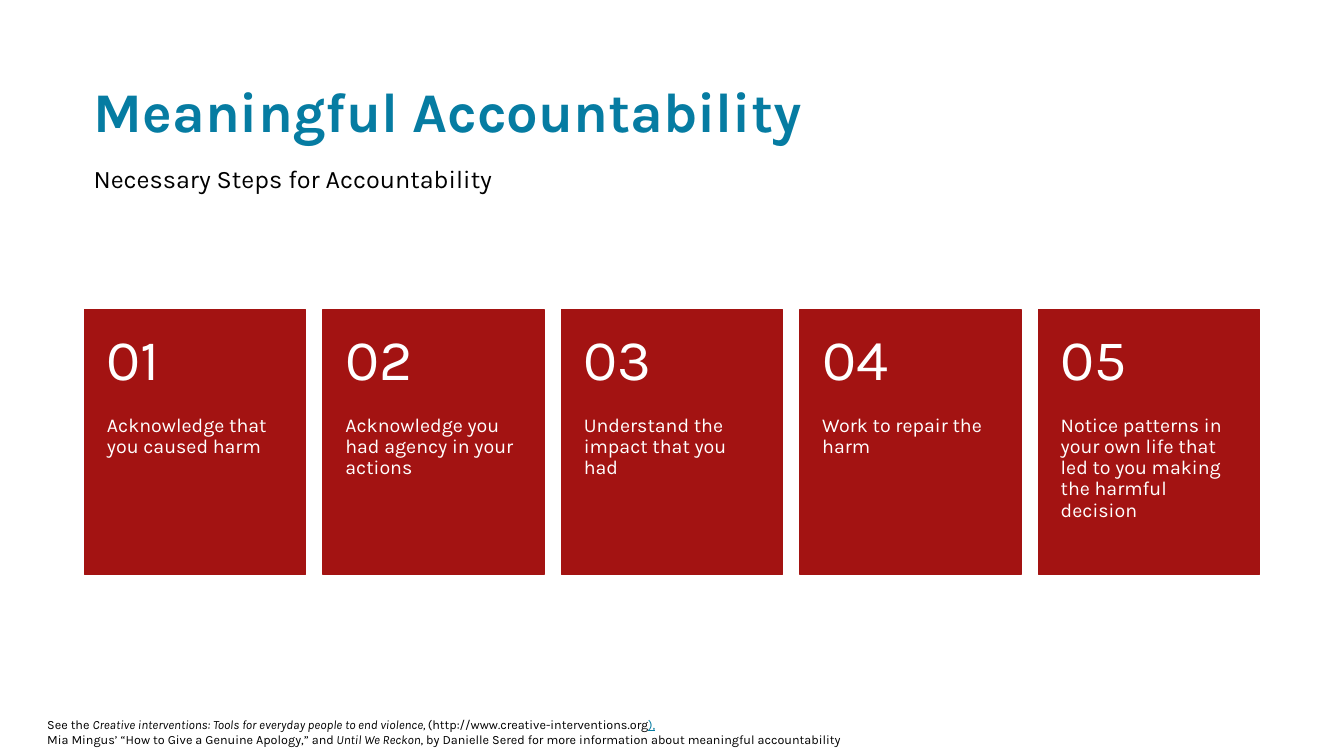
from pptx import Presentation
from pptx.dml.color import RGBColor
from pptx.enum.shapes import MSO_SHAPE
from pptx.enum.text import MSO_ANCHOR, MSO_AUTO_SIZE, PP_ALIGN
from pptx.util import Inches, Pt

RECTANGLE = MSO_SHAPE.RECTANGLE
TOP, MIDDLE = MSO_ANCHOR.TOP, MSO_ANCHOR.MIDDLE
LEFT = PP_ALIGN.LEFT
GROW = MSO_AUTO_SIZE.SHAPE_TO_FIT_TEXT
FONT = "Karla"
TEAL, RED, BLACK, WHITE = "067CA2", "A31312", "000000", "FFFFFF"

STEPS = [
    "Acknowledge that you caused harm",
    "Acknowledge you had agency in your actions",
    "Understand the impact that you had",
    "Work to repair the harm",
    "Notice patterns in your own life that led to you making the harmful decision",
]
CARD_LEFT, CARD_TOP, CARD_PITCH = 0.84, 3.07, 2.365
CARD_WIDTH, CARD_HEIGHT, NUMBER_HEIGHT = 2.19, 2.63, 1.05

# Each run: text, italic, underlined
SOURCES = [
    [
        ("See the ", False, False),
        ("Creative interventions: Tools for everyday people to end violence, ", True, False),
        ("(http://www.creative-interventions.org", False, False),
        ("),", False, True),
    ],
    [
        ("Mia Mingus’ “How to Give a Genuine Apology,” and", False, False),
        (" Until We Reckon", True, False),
        (", by Danielle Sered for more information about meaningful accountability", False, False),
    ],
]


def style(font, size, color):
    font.name = FONT
    font.size = Pt(size)
    font.color.rgb = RGBColor.from_string(color)


def add_text(shapes, box, text, size, color, anchor=TOP, margins=(0.1, 0.05, 0.1, 0.05)):
    """Add a wrapped text box; box is left, top, width, height in inches."""
    shape = shapes.add_textbox(*map(Inches, box))
    frame = shape.text_frame
    frame.word_wrap = True
    frame.vertical_anchor = anchor
    (frame.margin_left, frame.margin_top,
     frame.margin_right, frame.margin_bottom) = map(Inches, margins)
    paragraph = frame.paragraphs[0]
    paragraph.text = text
    style(paragraph.font, size, color)
    return frame


presentation = Presentation()
presentation.slide_width = Inches(13.33)
presentation.slide_height = Inches(7.5)
slide = presentation.slides.add_slide(presentation.slide_layouts[5])

title = slide.shapes.title
title.left, title.top = Inches(0.83), Inches(0.78)
title.width, title.height = Inches(11.58), Inches(0.71)
title.text_frame.text = "Meaningful Accountability"
title.text_frame.vertical_anchor = MIDDLE
paragraph = title.text_frame.paragraphs[0]
paragraph.alignment = LEFT
paragraph.line_spacing = 0.9
style(paragraph.font, 40, TEAL)
paragraph.font.bold = True

add_text(slide.shapes, (0.83, 1.57, 11.67, 1.27), "Necessary Steps for Accountability", 18, BLACK)

cards = slide.shapes.add_group_shape().shapes
for index, step in enumerate(STEPS):
    left = CARD_LEFT + index * CARD_PITCH
    card = cards.add_shape(RECTANGLE, Inches(left), Inches(CARD_TOP),
                           Inches(CARD_WIDTH), Inches(CARD_HEIGHT))
    card.shadow.inherit = False
    card.fill.solid()
    card.fill.fore_color.rgb = RGBColor.from_string(RED)
    card.line.color.rgb = RGBColor.from_string(RED)
    card.line.width = Pt(1)

    step_box = (left, CARD_TOP + NUMBER_HEIGHT, CARD_WIDTH, CARD_HEIGHT - NUMBER_HEIGHT)
    number_box = (left, CARD_TOP, CARD_WIDTH, NUMBER_HEIGHT)
    step_frame = add_text(cards, step_box, step, 14, WHITE, TOP, (0.22, 0, 0.22, 0.36))
    number_frame = add_text(cards, number_box, f"{index + 1:02}", 41, WHITE, MIDDLE,
                            (0.22, 0.18, 0.22, 0.18))
    for frame in (step_frame, number_frame):
        frame.paragraphs[0].line_spacing = 0.9

footer = add_text(slide.shapes, (0.37, 7.06, 12.76, 0.4), "", 9, BLACK)
footer.auto_size = GROW
footer.add_paragraph()
for paragraph, runs in zip(footer.paragraphs, SOURCES):
    style(paragraph.font, 9, BLACK)
    for text, italic, underlined in runs:
        run = paragraph.add_run()
        run.text = text
        run.font.italic = italic
        if underlined:
            run.font.underline = True
            run.font.color.rgb = RGBColor.from_string(TEAL)

presentation.save("out.pptx")
